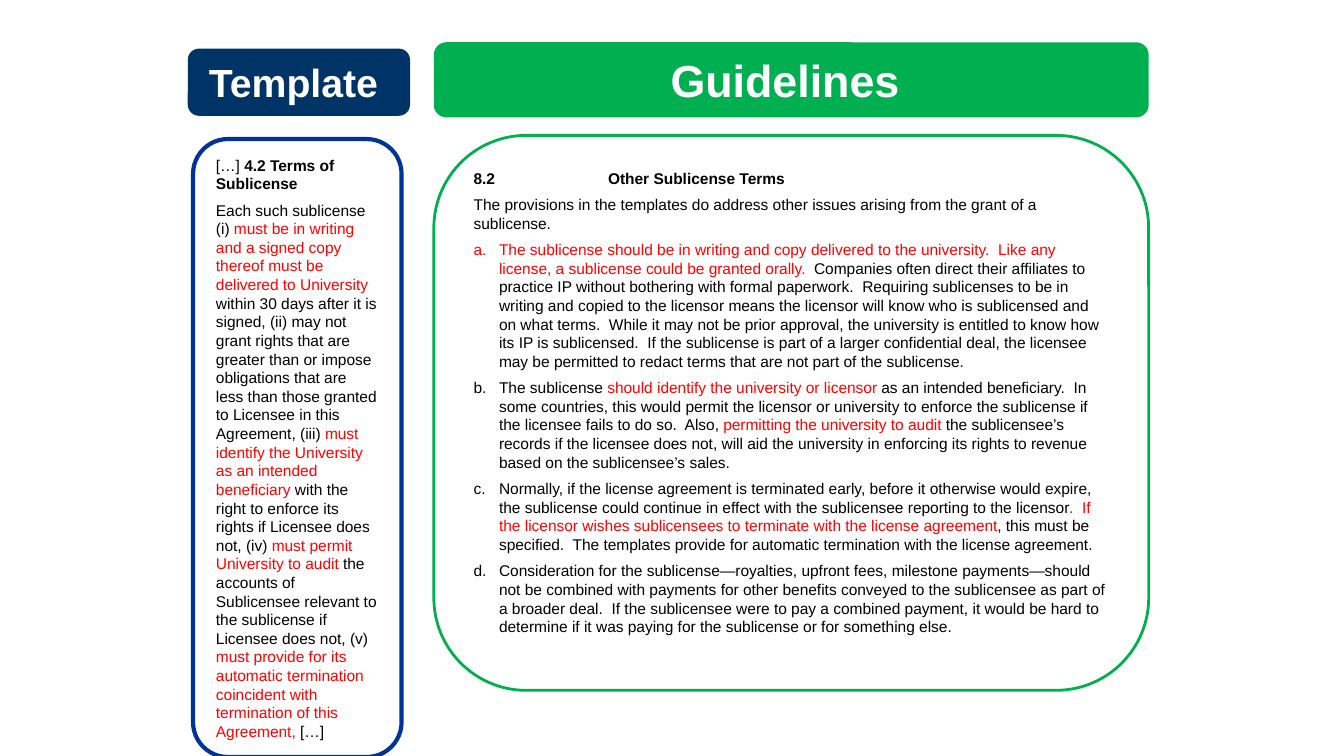
from lxml import etree
from pptx import Presentation
from pptx.dml.color import RGBColor
from pptx.enum.shapes import MSO_SHAPE
from pptx.enum.text import MSO_ANCHOR, PP_ALIGN
from pptx.oxml.ns import qn
from pptx.util import Cm, Pt

ROUNDED = MSO_SHAPE.ROUNDED_RECTANGLE
TOP, MIDDLE = MSO_ANCHOR.TOP, MSO_ANCHOR.MIDDLE
LEFT, CENTER = PP_ALIGN.LEFT, PP_ALIGN.CENTER

BLACK = RGBColor(0x00, 0x00, 0x00)
WHITE = RGBColor(0xFF, 0xFF, 0xFF)
RED = RGBColor(0xFF, 0x00, 0x00)
GREEN = RGBColor(0x00, 0xB0, 0x50)
NAVY = RGBColor(0x00, 0x33, 0x66)
BLUE = RGBColor(0x00, 0x33, 0x99)

GUIDELINES_LEFT, GUIDELINES_WIDTH = 8.2, 13.51

TEMPLATE_HEADING = [("[…] ", BLACK, False), ("4.2 Terms of Sublicense", BLACK, True)]
TEMPLATE_TERMS = [
    ("Each such sublicense (i) ", BLACK),
    ("must be in writing and a signed copy thereof must be delivered to University", RED),
    (" within 30 days after it is signed, (ii) may not grant rights that are greater than "
     "or impose obligations that are less than those granted to Licensee in this "
     "Agreement, (iii)", BLACK),
    (" must identify the University as an intended beneficiary ", RED),
    ("with the right to enforce its rights if Licensee does not, (iv) ", BLACK),
    ("must permit University to audit", RED),
    (" the accounts of Sublicensee relevant to the sublicense if Licensee does not, (v) ", BLACK),
    ("must provide for its automatic termination coincident with termination of this "
     "Agreement,", RED),
    (" […]", BLACK),
]

GUIDELINES_HEADING = [("8.2\tOther Sublicense Terms", BLACK, True)]
GUIDELINES_INTRO = [("The provisions in the templates do address other issues arising from "
                     "the grant of a sublicense.", BLACK)]
GUIDELINES_ITEMS = [
    [
        ("The sublicense should be in writing and copy delivered to the university.  Like any "
         "license, a sublicense could be granted orally.  ", RED),
        ("Companies often direct their affiliates to practice IP without bothering with formal "
         "paperwork.  Requiring sublicenses to be in writing and copied to the licensor means "
         "the licensor will know who is sublicensed and on what terms.  While it may not be "
         "prior approval, the university is entitled to know how its IP is sublicensed.  If "
         "the sublicense is part of a larger confidential deal, the licensee may be permitted "
         "to redact terms that are not part of the sublicense.", BLACK),
    ],
    [
        ("The sublicense ", BLACK),
        ("should identify the university or licensor ", RED),
        ("as an intended beneficiary.  In some countries, this would permit the licensor or "
         "university to enforce the sublicense if the licensee fails to do so.  Also, ", BLACK),
        ("permitting the university to audit ", RED),
        ("the sublicensee’s records if the licensee does not, will aid the university in "
         "enforcing its rights to revenue based on the sublicensee’s sales.", BLACK),
    ],
    [
        ("Normally, if the license agreement is terminated early, before it otherwise would "
         "expire, the sublicense could continue in effect with the sublicensee reporting to "
         "the licensor", BLACK),
        (".  If the licensor wishes sublicensees to terminate with the license agreement", RED),
        (", this must be specified.  The templates provide for automatic termination with the "
         "license agreement.", BLACK),
    ],
    [
        ("Consideration for the sublicense—royalties, upfront fees, milestone payments—should "
         "not be combined with payments for other benefits conveyed to the sublicensee as part "
         "of a broader deal.  If the sublicensee were to pay a combined payment, it would be "
         "hard to determine if it was paying for the sublicense or for something else.", BLACK),
    ],
]


class SlideBuilder:
    font_name = "Arial"
    body_size = 8.3
    indent = Cm(0.48)
    tab_stop = Cm(2.54)

    def __init__(self, slide):
        self.slide = slide

    def box(self, left, top, width, height, fill, anchor):
        shape = self.slide.shapes.add_shape(ROUNDED, Cm(left), Cm(top), Cm(width), Cm(height))
        shape.shadow.inherit = False
        shape.fill.solid()
        shape.fill.fore_color.rgb = fill
        shape.line.fill.background()
        text_frame = shape.text_frame
        text_frame.word_wrap = True
        text_frame.vertical_anchor = anchor
        text_frame.margin_left = Cm(0.24)
        text_frame.margin_right = Cm(0.27)
        text_frame.margin_top = text_frame.margin_bottom = Cm(0.12)
        return shape

    def run(self, paragraph, text, size, color, bold=False):
        run = paragraph.add_run()
        run.text = text
        run.font.name = self.font_name
        run.font.size = Pt(size)
        run.font.color.rgb = color
        run.font.bold = bold

    def title(self, left, top, width, height, text, size, fill):
        shape = self.box(left, top, width, height, fill, MIDDLE)
        paragraph = shape.text_frame.paragraphs[0]
        paragraph.alignment = CENTER
        self.run(paragraph, text, size, WHITE, True)
        self.run(paragraph, " ", size - 3, WHITE, True)

    def panel(self, left, top, width, height, color, weight, paragraphs, items=()):
        shape = self.box(left, top, width, height, WHITE, TOP)
        shape.line.color.rgb = color
        shape.line.width = Pt(weight)
        text_frame = shape.text_frame
        for index, pieces in enumerate([*paragraphs, *items]):
            paragraph = text_frame.add_paragraph() if index else text_frame.paragraphs[0]
            if index >= len(paragraphs):
                self.number(paragraph)
            elif "\t" in pieces[0][0]:
                self.tab(paragraph)
            paragraph.alignment = LEFT
            if index:
                paragraph.space_before = Pt(self.body_size / 2)
            for text, *style in pieces:
                self.run(paragraph, text, self.body_size, *style)

    def number(self, paragraph):
        properties = paragraph._p.get_or_add_pPr()
        properties.set("marL", str(self.indent))
        properties.set("indent", str(-self.indent))
        etree.SubElement(properties, qn("a:buFont"), typeface=self.font_name)
        etree.SubElement(properties, qn("a:buAutoNum"), type="alphaLcPeriod")

    def tab(self, paragraph):
        tab_list = etree.SubElement(paragraph._p.get_or_add_pPr(), qn("a:tabLst"))
        etree.SubElement(tab_list, qn("a:tab"), pos=str(self.tab_stop), algn="l")


def main():
    presentation = Presentation()
    presentation.slide_width = Cm(25.4)
    presentation.slide_height = Cm(14.29)
    builder = SlideBuilder(presentation.slides.add_slide(presentation.slide_layouts[6]))

    builder.panel(GUIDELINES_LEFT, 2.56, GUIDELINES_WIDTH, 10.49, GREEN, 1.5,
                  [GUIDELINES_HEADING, GUIDELINES_INTRO], GUIDELINES_ITEMS)
    builder.title(GUIDELINES_LEFT, 0.8, GUIDELINES_WIDTH, 1.42, "Guidelines", 24, GREEN)
    builder.panel(3.65, 2.63, 3.94, 11.68, BLUE, 2.25, [TEMPLATE_HEADING, TEMPLATE_TERMS])
    builder.title(3.55, 0.92, 4.2, 1.27, "Template", 21, NAVY)

    presentation.save("out.pptx")


if __name__ == "__main__":
    main()
